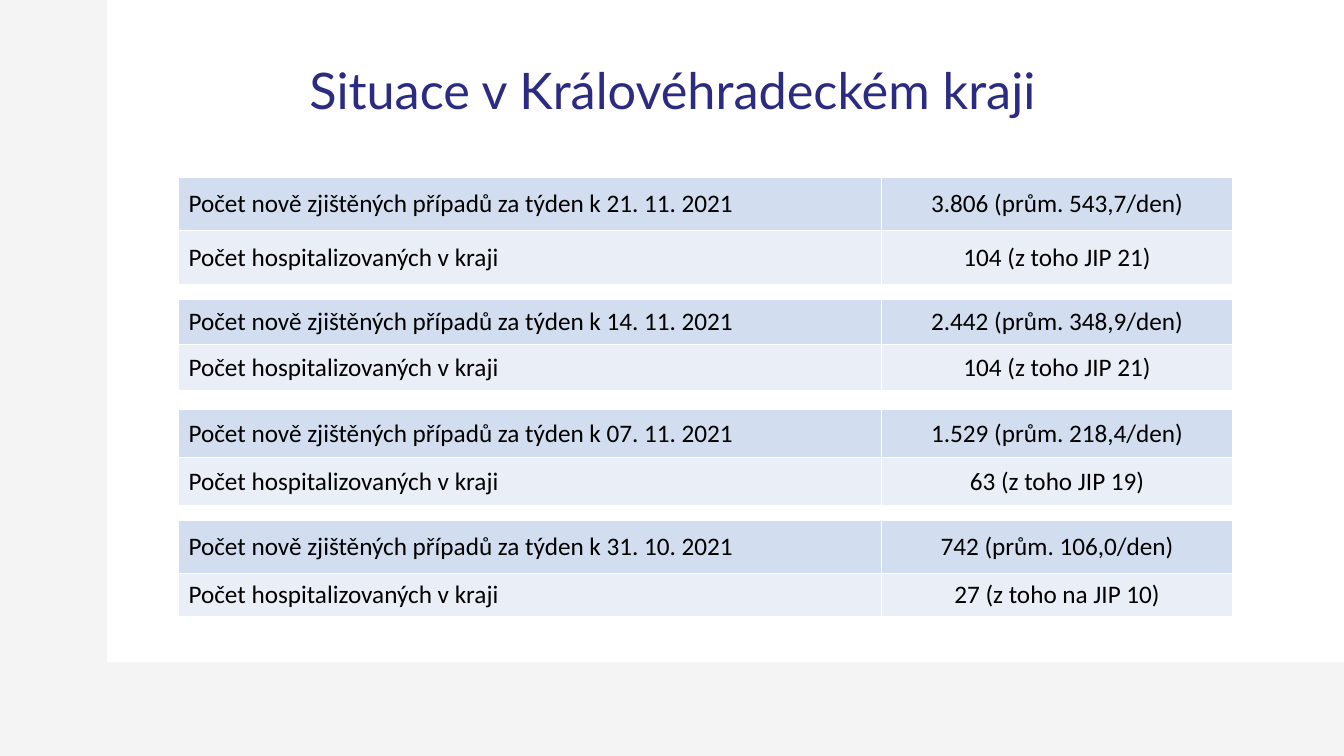
from lxml import etree
from pptx import Presentation
from pptx.dml.color import RGBColor
from pptx.enum.shapes import MSO_SHAPE as Shape
from pptx.enum.text import MSO_ANCHOR as Anchor, PP_ALIGN as Align
from pptx.oxml import parse_xml
from pptx.oxml.ns import nsdecls, qn
from pptx.util import Inches, Pt


def paint(fill, color):
    fill.solid()
    fill.fore_color.rgb = RGBColor.from_string(color)


def style_text(para, font, size, color, align):
    para.alignment = align
    for span in para.runs:
        span.font.name = font
        span.font.size = Pt(size)
        span.font.bold = False
        span.font.color.rgb = RGBColor.from_string(color)


deck = Presentation()
deck.slide_width = Inches(13.33)
deck.slide_height = Inches(7.5)
page = deck.slides.add_slide(deck.slide_layouts[5])
paint(page.background.fill, "F4F4F4")

title = page.shapes.title
title.left, title.top = Inches(0.92), Inches(0.4)
title.width, title.height = Inches(11.5), Inches(1.05)
title.text_frame.text = "Situace v Královéhradeckém kraji"
title.text_frame.word_wrap = True
title.text_frame.vertical_anchor = Anchor.MIDDLE
heading = title.text_frame.paragraphs[0]
heading.line_spacing = 0.9
style_text(heading, "Lato", 36, "2B2B82", Align.CENTER)

panel = page.shapes.add_shape(Shape.RECTANGLE, Inches(1.06), 0, Inches(12.27), Inches(6.57))
panel.shadow.inherit = False
paint(panel.fill, "FFFFFF")
panel.line.fill.background()
title.element.addprevious(panel.element)

weeks = [
    (1.76, (0.53, 0.53), "21. 11. 2021", "3.806 (prům. 543,7/den)", "104 (z toho JIP 21)"),
    (2.97, (0.45, 0.45), "14. 11. 2021", "2.442 (prům. 348,9/den)", "104 (z toho JIP 21)"),
    (4.06, (0.48, 0.48), "07. 11. 2021", "1.529 (prům. 218,4/den)", "63 (z toho JIP 19)"),
    (5.16, (0.53, 0.43), "31. 10. 2021", "742 (prům. 106,0/den)", "27 (z toho na JIP 10)"),
]
column_widths = (6.97, 3.49)
row_fills = ("D2DEEF", "EAEFF7")
column_aligns = (Align.LEFT, Align.CENTER)

for top, row_heights, date, cases, hospitalized in weeks:
    frame = page.shapes.add_table(
        2, 2, Inches(1.77), Inches(top), Inches(sum(column_widths)), Inches(sum(row_heights))
    )
    table = frame.table
    table.first_row = False
    for column, width in zip(table.columns, column_widths):
        column.width = Inches(width)
    rows = [
        (f"Počet nově zjištěných případů za týden k {date}", cases),
        ("Počet hospitalizovaných v kraji", hospitalized),
    ]
    for r, texts in enumerate(rows):
        table.rows[r].height = Inches(row_heights[r])
        for c, text in enumerate(texts):
            cell = table.cell(r, c)
            cell.text_frame.text = text
            cell.vertical_anchor = Anchor.MIDDLE
            paint(cell.fill, row_fills[r])
            style_text(cell.text_frame.paragraphs[0], "Calibri", 18, "000000", column_aligns[c])
            properties = cell.fill._xPr
            for position, side in enumerate(("lnL", "lnR", "lnT", "lnB")):
                border = parse_xml(f'<a:{side} {nsdecls("a")} w="12700"/>')
                ink = etree.SubElement(border, qn("a:solidFill"))
                etree.SubElement(ink, qn("a:srgbClr"), val="FFFFFF")
                properties.insert(position, border)

deck.save("out.pptx")
